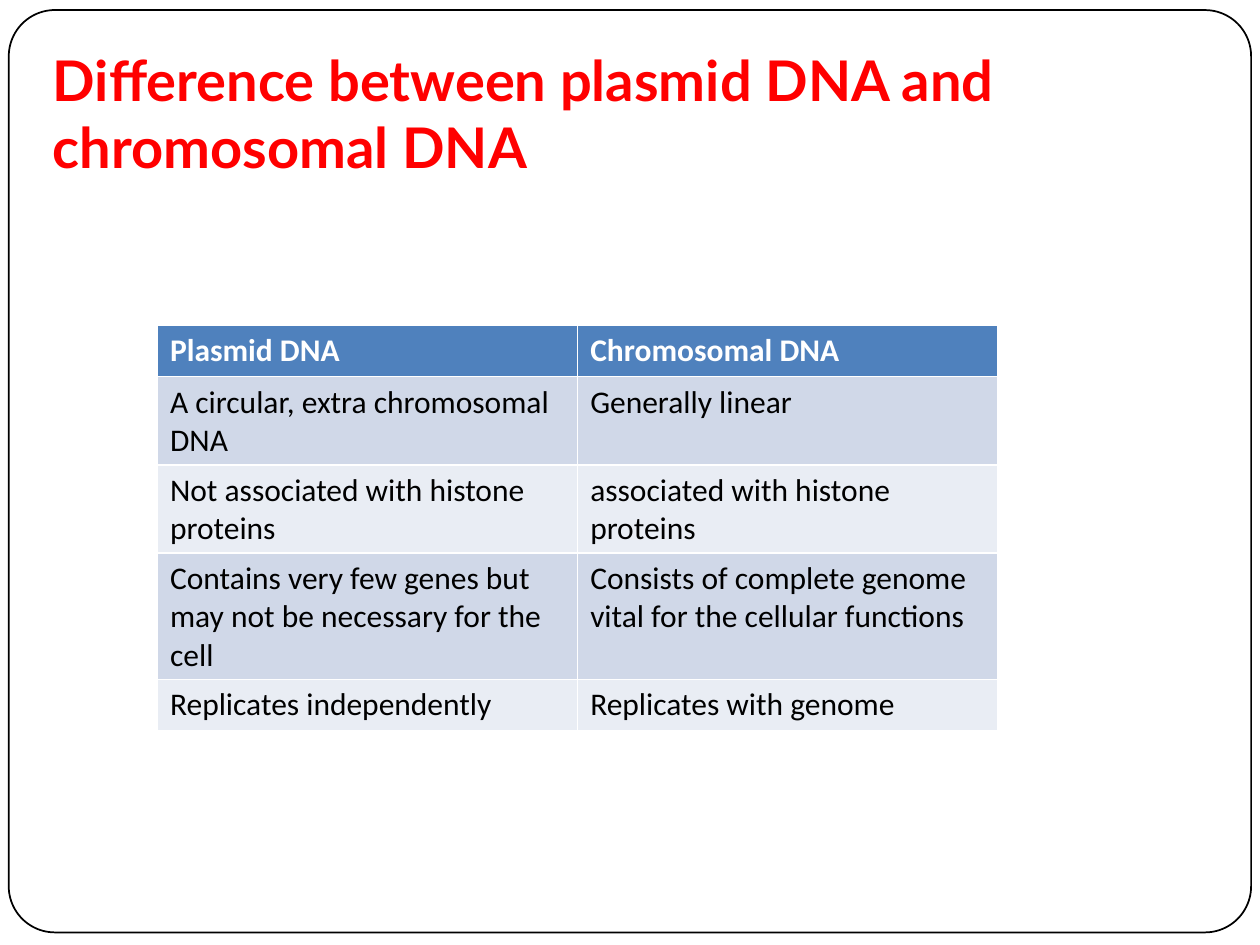
"""Build a slide that compares plasmid DNA with chromosomal DNA in a table."""
from pptx import Presentation
from pptx.dml.color import RGBColor
from pptx.enum.shapes import MSO_SHAPE
from pptx.enum.text import MSO_ANCHOR
from pptx.util import Inches, Pt

ROUNDED = MSO_SHAPE.ROUNDED_RECTANGLE
TOP = MSO_ANCHOR.TOP

COLORS = {
    "frame": "000000",
    "title": "FF0000",
    "header": "4F81BD",
    "header_text": "FFFFFF",
    "odd": "D0D8E8",
    "even": "E9EDF4",
    "text": "000000",
}

ROWS = [
    ("Plasmid DNA", "Chromosomal DNA"),
    ("A circular, extra chromosomal DNA", "Generally linear"),
    ("Not associated with histone proteins", "associated with histone proteins"),
    ("Contains very few genes but may not be necessary for the cell",
     "Consists of complete genome vital for the cellular functions"),
    ("Replicates independently", "Replicates with genome"),
]


def rgb(name):
    return RGBColor.from_string(COLORS[name])


def write(tf, text, font="Calibri", size=18, color="text", bold=False):
    r = tf.paragraphs[0].add_run()
    r.text = text
    r.font.name = font
    r.font.size = Pt(size)
    r.font.bold = bold
    r.font.color.rgb = rgb(color)


prs = Presentation()
prs.slide_width = Inches(10)
prs.slide_height = Inches(7.5)
s = prs.slides.add_slide(prs.slide_layouts[6])

frame = s.shapes.add_shape(ROUNDED, Inches(0.07), Inches(0.08), Inches(9.86), Inches(7.32))
frame.adjustments[0] = 0.05
frame.shadow.inherit = False
frame.fill.background()
frame.line.color.rgb = rgb("frame")
frame.line.width = Pt(1)

title = s.shapes.add_textbox(Inches(0.42), Inches(0.36), Inches(9.16), Inches(1.08))
tf = title.text_frame
tf.word_wrap = True
tf.vertical_anchor = TOP
tf.margin_left = tf.margin_top = tf.margin_right = tf.margin_bottom = 0
write(tf, "Difference between plasmid DNA and chromosomal DNA",
      font="Lato", size=32, color="title", bold=True)

row_height = Inches(0.41)
table = s.shapes.add_table(len(ROWS), 2, Inches(1.25), Inches(2.58),
                           Inches(6.67), row_height * len(ROWS)).table
for i, row in enumerate(ROWS):
    table.rows[i].height = row_height
    header = i == 0
    fill = "header" if header else "odd" if i % 2 else "even"
    for j, text in enumerate(row):
        cell = table.cell(i, j)
        cell.fill.solid()
        cell.fill.fore_color.rgb = rgb(fill)
        write(cell.text_frame, text, color="header_text" if header else "text", bold=header)

prs.save("out.pptx")
